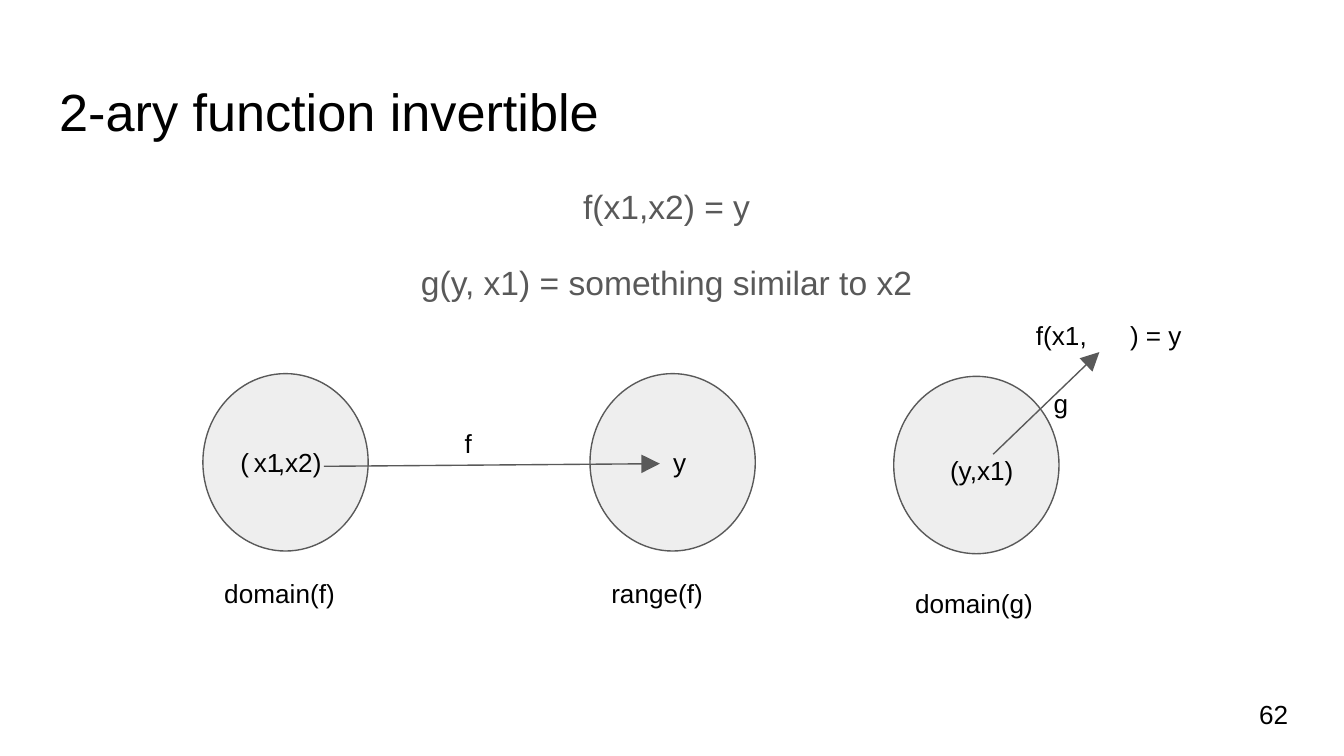
from dataclasses import dataclass

from lxml import etree
from pptx import Presentation
from pptx.dml.color import RGBColor
from pptx.enum.shapes import MSO_CONNECTOR, MSO_SHAPE
from pptx.enum.text import MSO_ANCHOR, PP_ALIGN
from pptx.oxml.ns import qn
from pptx.util import Inches, Pt

BLACK = RGBColor(0x00, 0x00, 0x00)
GRAY = RGBColor(0x59, 0x59, 0x59)
PALE = RGBColor(0xEE, 0xEE, 0xEE)
OVAL = MSO_SHAPE.OVAL
STRAIGHT = MSO_CONNECTOR.STRAIGHT
TOP, MIDDLE = MSO_ANCHOR.TOP, MSO_ANCHOR.MIDDLE
LEFT, CENTER = PP_ALIGN.LEFT, PP_ALIGN.CENTER
FONT = "Arial"


@dataclass
class Label:
    text: str
    left: float
    top: float
    width: float = 1.11
    height: float = 0.37
    anchor: MSO_ANCHOR = TOP
    blank: float = 0


@dataclass
class Domain:
    left: float
    top: float
    text: str = ""
    gap: float = 0


@dataclass
class Arrow:
    start: tuple[float, float]
    end: tuple[float, float]


DOMAINS = [
    Domain(1.51, 2.78, "(\t,x2)", 0.28),
    Domain(4.39, 2.78),
    Domain(6.65, 2.8),
]
ARROWS = [
    Arrow((2.41, 3.47), (4.91, 3.45)),
    Arrow((7.39, 3.38), (8.18, 2.62)),
]
LABELS = [
    Label("domain(f)", 1.57, 4.2),
    Label("range(f)", 4.45, 4.2),
    Label("domain(g)", 6.71, 4.27),
    Label("f", 3.36, 3.08, 0.3),
    Label("y", 4.91, 3.22, 0.3),
    Label("x1", 1.79, 3.22),
    Label("(y,x1)", 6.97, 3.28),
    Label("f(x1, \t) = y", 7.61, 2.28, 1.56, blank=0.7),
    Label("g", 7.74, 2.78),
    Label("62", 9.27, 5.1, 0.6, 0.43, MIDDLE),
]
FORMULAS = ["f(x1,x2) = y", "g(y, x1) = something similar to x2"]


def write(shape, lines: list[str], size: int, color: RGBColor = BLACK,
          anchor: MSO_ANCHOR = TOP, align: PP_ALIGN = LEFT) -> None:
    frame = shape.text_frame
    frame.text = "\n".join(lines)
    frame.word_wrap = True
    frame.vertical_anchor = anchor
    frame.margin_left = frame.margin_right = Inches(0.1)
    frame.margin_top = frame.margin_bottom = Inches(0.1)
    for line in frame.paragraphs:
        line.alignment = align
        line.font.name = FONT
        line.font.size = Pt(size)
        line.font.color.rgb = color


def set_tab(line, stop: float) -> None:
    props = line._p.get_or_add_pPr()
    tabs = etree.Element(qn("a:tabLst"))
    etree.SubElement(tabs, qn("a:tab"), pos=str(Inches(stop)), algn="l")
    props.find(qn("a:defRPr")).addprevious(tabs)


def rule_blank(line) -> None:
    """Underline the tab so that it shows as a blank to fill in."""
    head, tail = line.text.split("\t")
    line.runs[0].text = head
    blank = line.add_run()
    blank.text = "\t"
    blank.font.underline = True
    line.add_run().text = tail


def add_title(slide, text: str) -> None:
    title = slide.shapes.title
    title.left, title.top = Inches(0.34), Inches(0.49)
    title.width, title.height = Inches(9.32), Inches(0.63)
    write(title, [text], 28)


def add_body(slide, lines: list[str]) -> None:
    body = slide.shapes.add_textbox(
        Inches(0.3), Inches(1.24), Inches(9.32), Inches(3.74))
    write(body, lines, 18, GRAY, align=CENTER)
    for line in body.text_frame.paragraphs:
        line.line_spacing = 1.15
        line.space_after = Pt(16)


def add_domain(slide, item: Domain) -> None:
    oval = slide.shapes.add_shape(
        OVAL, Inches(item.left), Inches(item.top), Inches(1.23), Inches(1.32))
    oval.shadow.inherit = False
    oval.fill.solid()
    oval.fill.fore_color.rgb = PALE
    oval.line.color.rgb = GRAY
    oval.line.width = Pt(0.75)
    if item.text:
        write(oval, [item.text], 14, anchor=MIDDLE)
        set_tab(oval.text_frame.paragraphs[0], item.gap)


def add_arrow(slide, item: Arrow) -> None:
    ends = [Inches(n) for n in item.start + item.end]
    arrow = slide.shapes.add_connector(STRAIGHT, *ends)
    arrow.line.color.rgb = GRAY
    arrow.line.width = Pt(0.75)
    props = arrow.line._get_or_add_ln()
    etree.SubElement(props, qn("a:tailEnd"), type="triangle", w="lg", len="lg")
    etree.SubElement(arrow._element.spPr, qn("a:effectLst"))


def add_label(slide, item: Label) -> None:
    box = slide.shapes.add_textbox(
        Inches(item.left), Inches(item.top),
        Inches(item.width), Inches(item.height))
    write(box, [item.text], 14, anchor=item.anchor)
    if item.blank:
        line = box.text_frame.paragraphs[0]
        rule_blank(line)
        set_tab(line, item.blank)


def main() -> None:
    deck = Presentation()
    deck.slide_width = Inches(10)
    deck.slide_height = deck.slide_width * 9 // 16
    slide = deck.slides.add_slide(deck.slide_layouts.get_by_name("Title Only"))
    add_title(slide, "2-ary function invertible")
    add_body(slide, FORMULAS)
    for domain in DOMAINS:
        add_domain(slide, domain)
    for arrow in ARROWS:
        add_arrow(slide, arrow)
    for label in LABELS:
        add_label(slide, label)
    deck.save("out.pptx")


if __name__ == "__main__":
    main()
